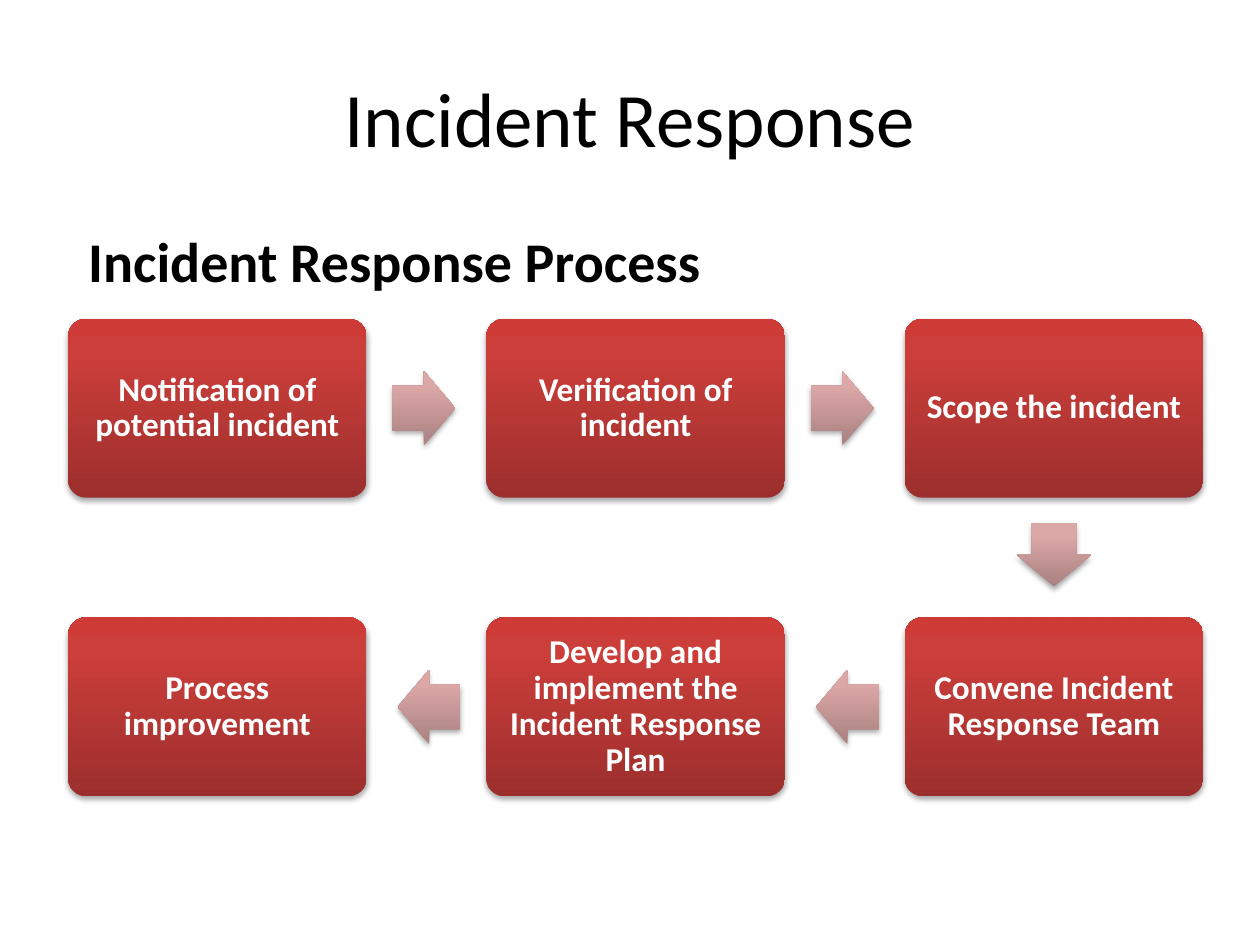
from lxml.etree import fromstring
from pptx import Presentation
from pptx.dml.color import RGBColor
from pptx.enum.shapes import MSO_SHAPE
from pptx.enum.text import MSO_ANCHOR, PP_ALIGN
from pptx.oxml.ns import nsdecls
from pptx.util import Inches, Pt

COLORS = {
    "text": "000000",
    "step_text": "FFFFFF",
    "step": ("9C2F2D", "CB3E3A", "CE3B37"),
    "arrow": ("A98180", "DBA7A7", "DDA7A6"),
    "shadow": "000000",
}
FONT = "Calibri"


def set_font(paragraph, size, color, bold=False):
    font = paragraph.font
    font.name, font.size, font.bold = FONT, Pt(size), bold
    font.color.rgb = RGBColor.from_string(color)


def add_shaded_shape(kind, center_x, center_y, width, height, shades):
    """Add a centred shape with a bottom-to-top gradient and a soft shadow."""
    shape = slide.shapes.add_shape(
        kind, Inches(center_x - width / 2), Inches(center_y - height / 2),
        Inches(width), Inches(height))
    shape.line.fill.background()
    stops = "".join(
        f'<a:gs pos="{position}000"><a:srgbClr val="{shade}"/></a:gs>'
        for position, shade in zip((0, 80, 100), shades))
    outline = shape.line._get_or_add_ln()
    outline.addprevious(fromstring(
        f'<a:gradFill {nsdecls("a")} rotWithShape="0"><a:gsLst>{stops}</a:gsLst>'
        '<a:lin ang="16200000" scaled="0"/></a:gradFill>'))
    outline.addnext(fromstring(
        f'<a:effectLst {nsdecls("a")}>'
        f'<a:outerShdw blurRad="{Pt(3.1)}" dist="{Pt(1.8)}" dir="5400000" rotWithShape="0">'
        f'<a:srgbClr val="{COLORS["shadow"]}"><a:alpha val="35000"/></a:srgbClr>'
        '</a:outerShdw></a:effectLst>'))
    return shape


prs = Presentation()
prs.slide_width, prs.slide_height = Inches(10), Inches(7.5)
slide = prs.slides.add_slide(prs.slide_layouts[1])

title = slide.shapes.title
title.left, title.top, title.width, title.height = map(Inches, (0.5, 0.3, 9, 1.25))
title.text_frame.text = "Incident Response"
title.text_frame.vertical_anchor = MSO_ANCHOR.MIDDLE
heading = title.text_frame.paragraphs[0]
heading.alignment = PP_ALIGN.CENTER
set_font(heading, 44, COLORS["text"])

body = slide.placeholders[1]
body.left, body.top, body.width, body.height = map(Inches, (0.5, 1.75, 9, 4.95))
body.text_frame.text = "Incident Response Process"
body.text_frame.margin_left = Inches(0.2)
subheading = body.text_frame.paragraphs[0]
set_font(subheading, 32, COLORS["text"], bold=True)
properties = subheading._p.get_or_add_pPr()
properties.set("marL", "0")
properties.set("indent", "0")
properties.insert_element_before(
    fromstring(f'<a:buNone {nsdecls("a")}/>'), "a:tabLst", "a:defRPr", "a:extLst")

# The process runs right along the first row and back left along the second.
STEPS = [
    ("Notification of potential incident", 0, 0),
    ("Verification of incident", 1, 0),
    ("Scope the incident", 2, 0),
    ("Convene Incident Response Team", 2, 1),
    ("Develop and implement the Incident Response Plan", 1, 1),
    ("Process improvement", 0, 1),
]
STEP_WIDTH, STEP_HEIGHT = 2.37, 1.42
FIRST_X, FIRST_Y = 1.725, 3.24
COLUMN_PITCH, ROW_PITCH = 3.32, 2.37
ARROW_LENGTH, ARROW_BREADTH = 0.5, 0.59
ARROW_LAG = 0.02  # arrows sit slightly nearer the step they leave
ROTATIONS = {(1, 0): 0, (0, 1): 90, (-1, 0): 180}

previous = None
for label, column, row in STEPS:
    x, y = FIRST_X + column * COLUMN_PITCH, FIRST_Y + row * ROW_PITCH
    if previous:
        from_column, from_row = previous
        dx, dy = column - from_column, row - from_row
        arrow = add_shaded_shape(
            MSO_SHAPE.RIGHT_ARROW,
            x - dx * (COLUMN_PITCH / 2 + ARROW_LAG),
            y - dy * (ROW_PITCH / 2 + ARROW_LAG),
            ARROW_LENGTH, ARROW_BREADTH, COLORS["arrow"])
        arrow.adjustments[0], arrow.adjustments[1] = 0.6, 0.5
        arrow.rotation = ROTATIONS[dx, dy]
    previous = column, row

    step = add_shaded_shape(
        MSO_SHAPE.ROUNDED_RECTANGLE, x, y, STEP_WIDTH, STEP_HEIGHT, COLORS["step"])
    step.adjustments[0] = 0.1
    frame = step.text_frame
    frame.text = label
    frame.word_wrap = True
    frame.vertical_anchor = MSO_ANCHOR.MIDDLE
    frame.margin_left = frame.margin_right = Inches(0.04)
    frame.margin_top = frame.margin_bottom = Inches(0.04)
    caption = frame.paragraphs[0]
    caption.alignment = PP_ALIGN.CENTER
    caption.line_spacing = 0.9
    set_font(caption, 19, COLORS["step_text"], bold=True)

prs.save("out.pptx")
